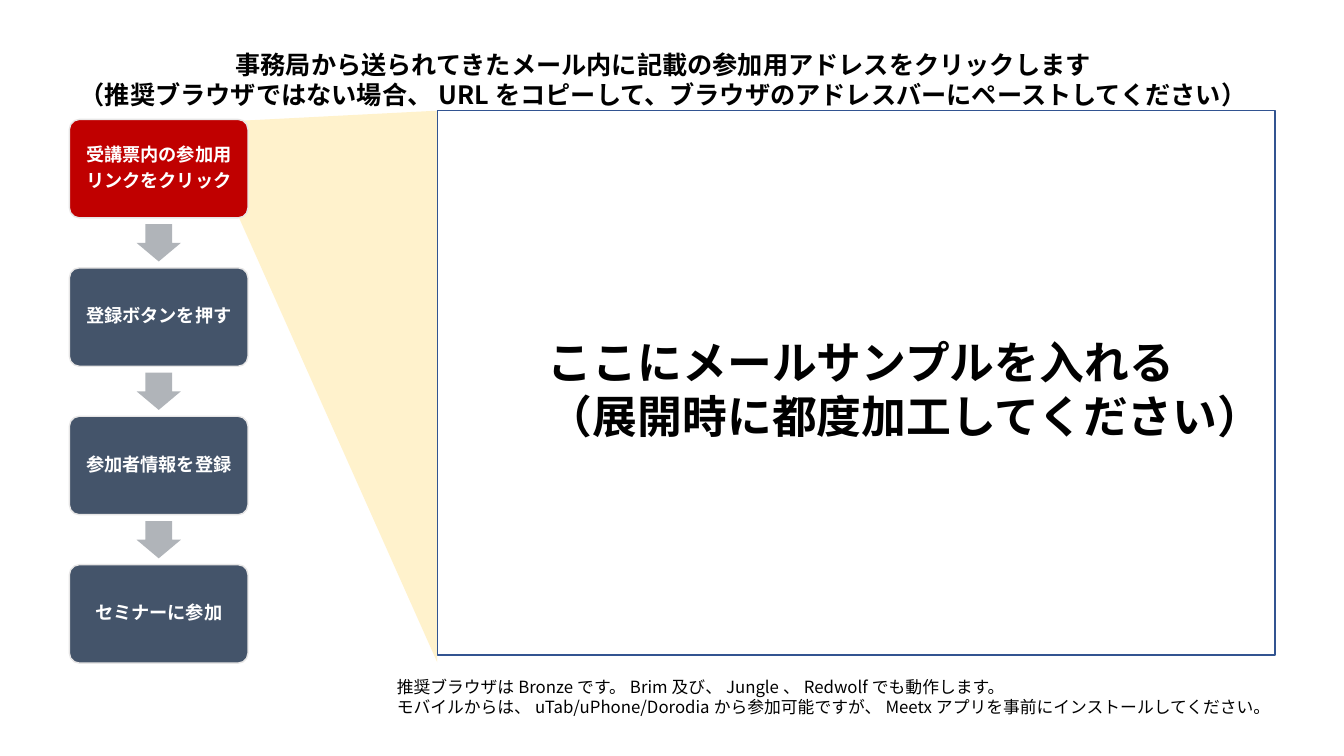
from lxml.etree import SubElement
from pptx import Presentation
from pptx.dml.color import RGBColor
from pptx.enum.shapes import MSO_SHAPE as Shape
from pptx.enum.text import MSO_ANCHOR as Anchor, PP_ALIGN as Align
from pptx.oxml.ns import qn
from pptx.util import Cm, Pt

FONT = "Noto Sans CJK JP"
COLORS = {
    "active": "C00000", "step": "44546A", "step_line": "E7E6E6",
    "arrow": "B0B4B9", "beam": "FFF2CC", "frame": "325491",
    "white": "FFFFFF", "black": "000000",
}


def paint(shape, fill, line=None):
    shape.shadow.inherit = False
    shape.fill.solid()
    shape.fill.fore_color.rgb = RGBColor.from_string(COLORS[fill])
    if line:
        shape.line.color.rgb = RGBColor.from_string(COLORS[line])
        shape.line.width = Pt(1)
    else:
        shape.line.fill.background()


def add_run(paragraph, text, size, color="black", bold=True):
    run = paragraph.add_run()
    run.text = text
    run.font.size = Pt(size)
    run.font.bold = bold
    run.font.name = FONT
    run.font.color.rgb = RGBColor.from_string(COLORS[color])
    SubElement(run.font._element, qn("a:ea")).set("typeface", FONT)


prs = Presentation()
prs.slide_width, prs.slide_height = Cm(33.87), Cm(19.05)
slide = prs.slides.add_slide(prs.slide_layouts[5])
shapes = slide.shapes

heading = shapes.title
heading.left, heading.top, heading.width, heading.height = Cm(1.57), Cm(1.12), Cm(30.28), Cm(1.45)
heading.text_frame.vertical_anchor = Anchor.TOP
instruction = heading.text_frame.paragraphs[0]
instruction.alignment = Align.CENTER
add_run(instruction, "事務局から送られてきたメール内に記載の参加用アドレスをクリックします", 18)
instruction.add_line_break()
add_run(instruction, "（推奨ブラウザではない場合、URLをコピーして、ブラウザのアドレスバーにペーストしてください）", 18)

beam_outline = shapes.build_freeform(Cm(5.99), Cm(5.41))
beam_outline.add_line_segments(
    [(Cm(11.02), Cm(16.69)), (Cm(11.02), Cm(2.79)), (Cm(5.94), Cm(3.05))]
)
paint(beam_outline.convert_to_shape(), "beam")

steps = [
    ["受講票内の参加用", "リンクをクリック"],
    ["登録ボタンを押す"],
    ["参加者情報を登録"],
    ["セミナーに参加"],
]
step_left, step_top, step_width, step_height, pitch = 1.75, 3.01, 4.5, 2.48, 3.74
arrow_length, arrow_breadth = 0.94, 1.12
for index, lines in enumerate(steps):
    top = step_top + index * pitch
    step = shapes.add_shape(
        Shape.ROUNDED_RECTANGLE, Cm(step_left), Cm(top), Cm(step_width), Cm(step_height)
    )
    step.adjustments[0] = 0.1
    paint(step, "step" if index else "active", "step_line")
    label = step.text_frame
    label.word_wrap = True
    label.vertical_anchor = Anchor.MIDDLE
    label.margin_left = label.margin_right = Cm(0.2)
    label.margin_top = label.margin_bottom = Cm(0.2)
    for number, line in enumerate(lines):
        paragraph = label.add_paragraph() if number else label.paragraphs[0]
        paragraph.alignment = Align.CENTER
        paragraph.line_spacing = 0.9
        paragraph.space_after = Pt(4.55)
        add_run(paragraph, line, 13, "white")

    if index < len(steps) - 1:
        center_x = step_left + step_width / 2
        center_y = top + (step_height + pitch) / 2
        arrow = shapes.add_shape(
            Shape.RIGHT_ARROW,
            Cm(center_x - arrow_length / 2), Cm(center_y - arrow_breadth / 2),
            Cm(arrow_length), Cm(arrow_breadth),
        )
        arrow.rotation = 90
        arrow.adjustments[0], arrow.adjustments[1] = 0.6, 0.5
        paint(arrow, "arrow")

mail_frame = shapes.add_shape(Shape.RECTANGLE, Cm(11.02), Cm(2.79), Cm(21.11), Cm(13.72))
paint(mail_frame, "white", "frame")

captions = [
    ((9.75, 16.92, 23.62, 1.27), 12, False, [
        "推奨ブラウザはBronzeです。Brim及び、Jungle、Redwolfでも動作します。",
        "モバイルからは、uTab/uPhone/Dorodiaから参加可能ですが、Meetxアプリを事前にインストールしてください。",
    ]),
    ((13.56, 8.31, 18.97, 3), 32, True, [
        "ここにメールサンプルを入れる",
        "（展開時に都度加工してください）",
    ]),
]
for box, size, bold, lines in captions:
    caption = shapes.add_textbox(*map(Cm, box)).text_frame
    caption.word_wrap = True
    for number, line in enumerate(lines):
        paragraph = caption.add_paragraph() if number else caption.paragraphs[0]
        add_run(paragraph, line, size, bold=bold)

prs.save("out.pptx")
